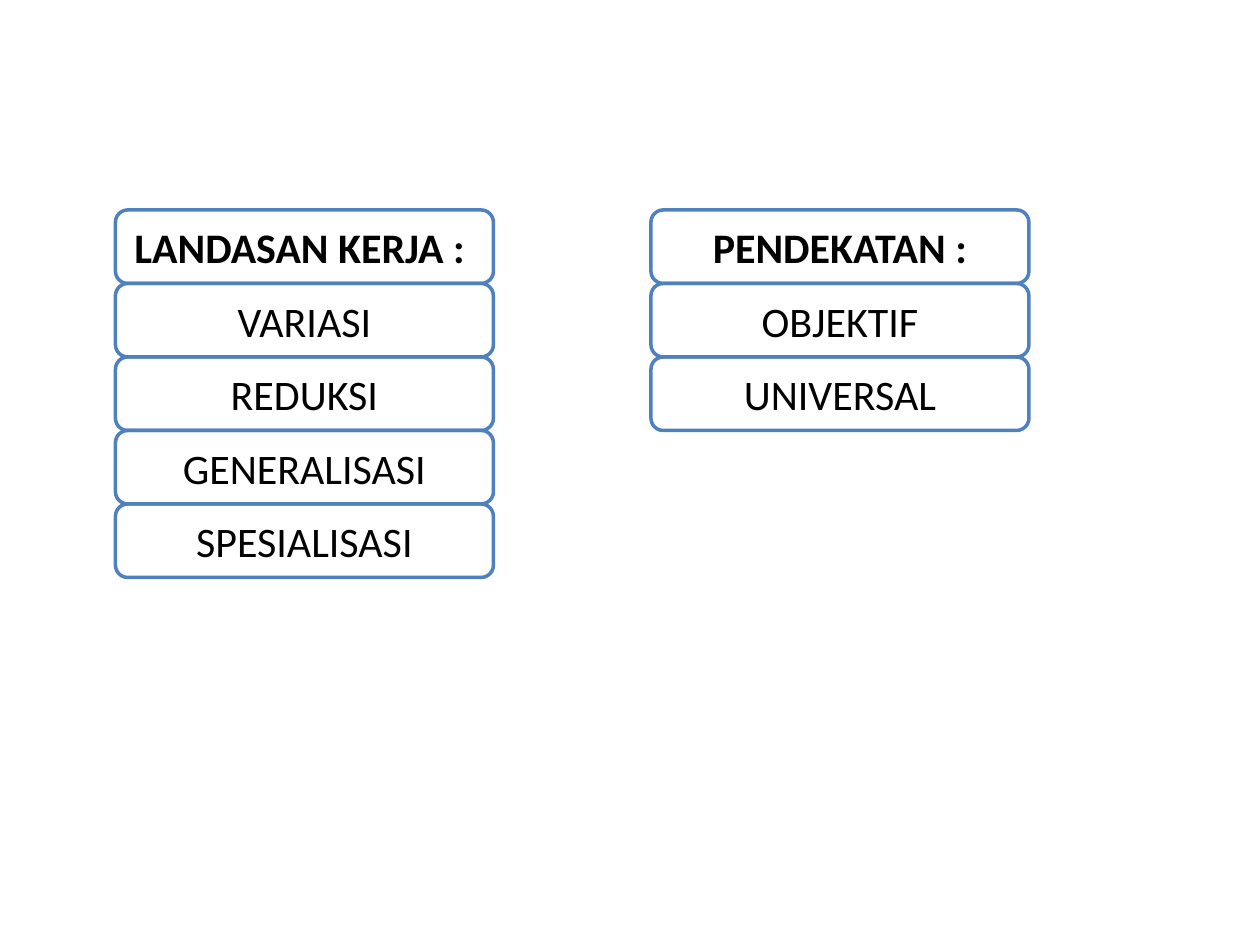
from pptx import Presentation
from pptx.dml.color import RGBColor
from pptx.enum import shapes, text
from pptx.util import Pt

COLORS = {"outline": "4F81BD", "text": "000000"}
ROW_HEIGHT = 42
WORK_BASIS = ["LANDASAN KERJA : ", "VARIASI", "REDUKSI", "GENERALISASI", "SPESIALISASI"]
APPROACH = ["PENDEKATAN :", "OBJEKTIF", "UNIVERSAL"]


def add_box(slide, left, top, width, height, label, bold):
    shape = slide.shapes.add_shape(
        shapes.MSO_SHAPE.ROUNDED_RECTANGLE, Pt(left), Pt(top), Pt(width), Pt(height)
    )
    shape.shadow.inherit = False
    shape.fill.background()
    shape.line.color.rgb = RGBColor.from_string(COLORS["outline"])
    shape.line.width = Pt(2)
    frame = shape.text_frame
    frame.word_wrap = True
    frame.vertical_anchor = text.MSO_ANCHOR.MIDDLE
    paragraph = frame.paragraphs[0]
    paragraph.text = label
    paragraph.alignment = text.PP_ALIGN.CENTER
    paragraph.font.name = "Calibri"
    paragraph.font.size = Pt(24)
    paragraph.font.bold = bold
    paragraph.font.color.rgb = RGBColor.from_string(COLORS["text"])


def add_stack(slide, left, top, width, labels):
    for row, label in enumerate(labels):
        add_box(slide, left, top + row * ROW_HEIGHT, width, ROW_HEIGHT, label, row == 0)


def main():
    presentation = Presentation()
    presentation.slide_width = Pt(720)
    presentation.slide_height = Pt(540)
    slide = presentation.slides.add_slide(presentation.slide_layouts[6])
    add_stack(slide, 66, 120, 216, WORK_BASIS)
    add_stack(slide, 372, 120, 216, APPROACH)
    presentation.save("out.pptx")


if __name__ == "__main__":
    main()
